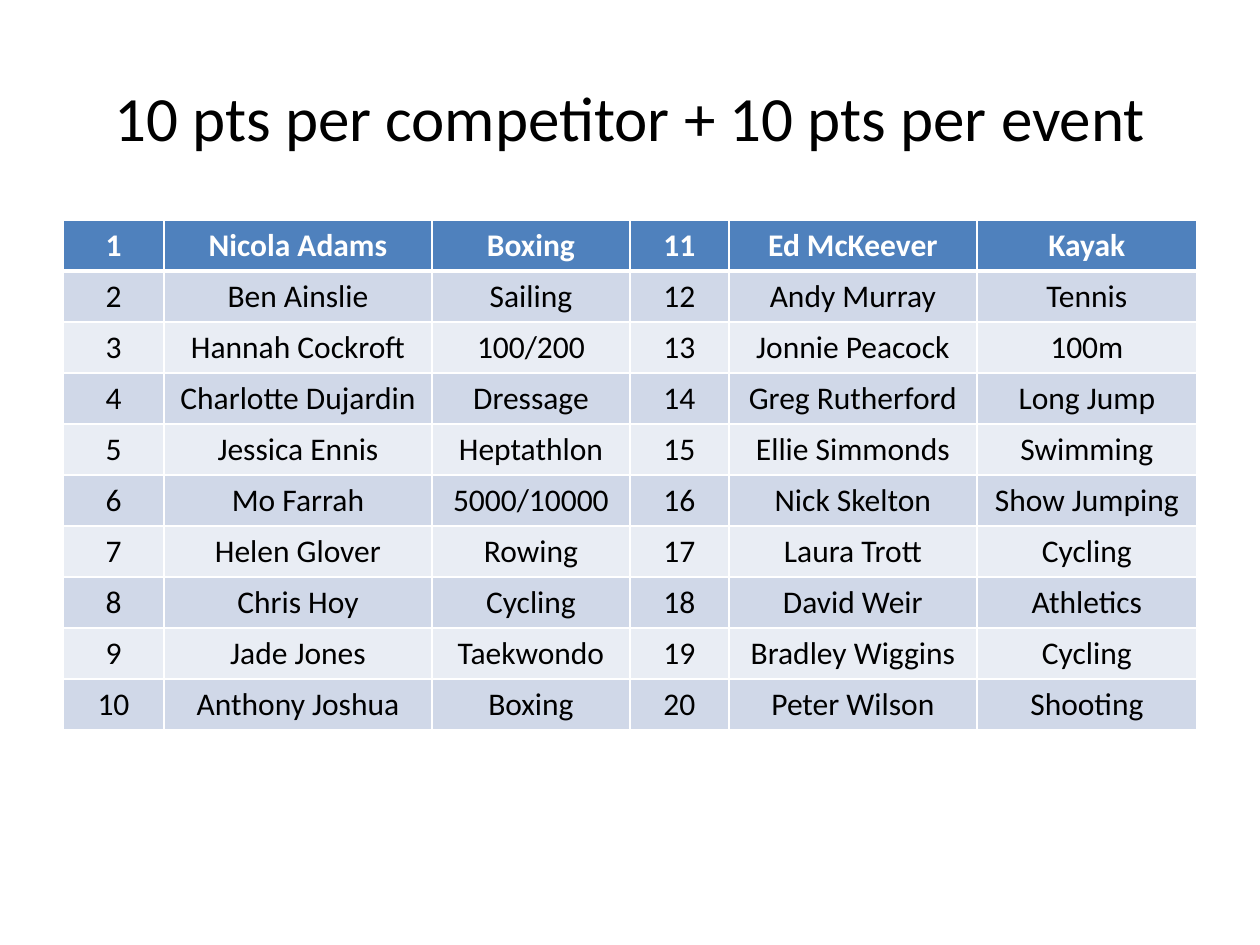
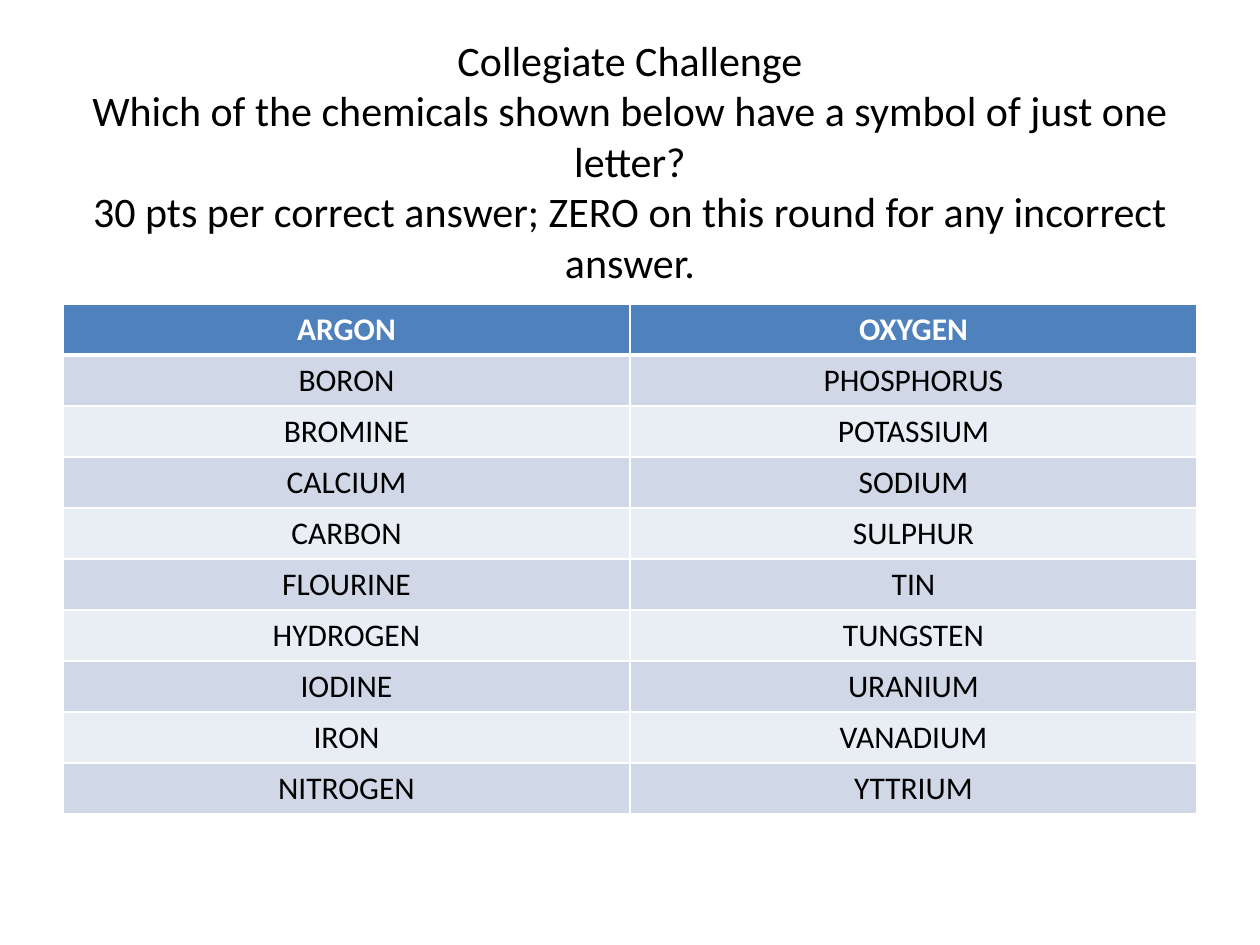
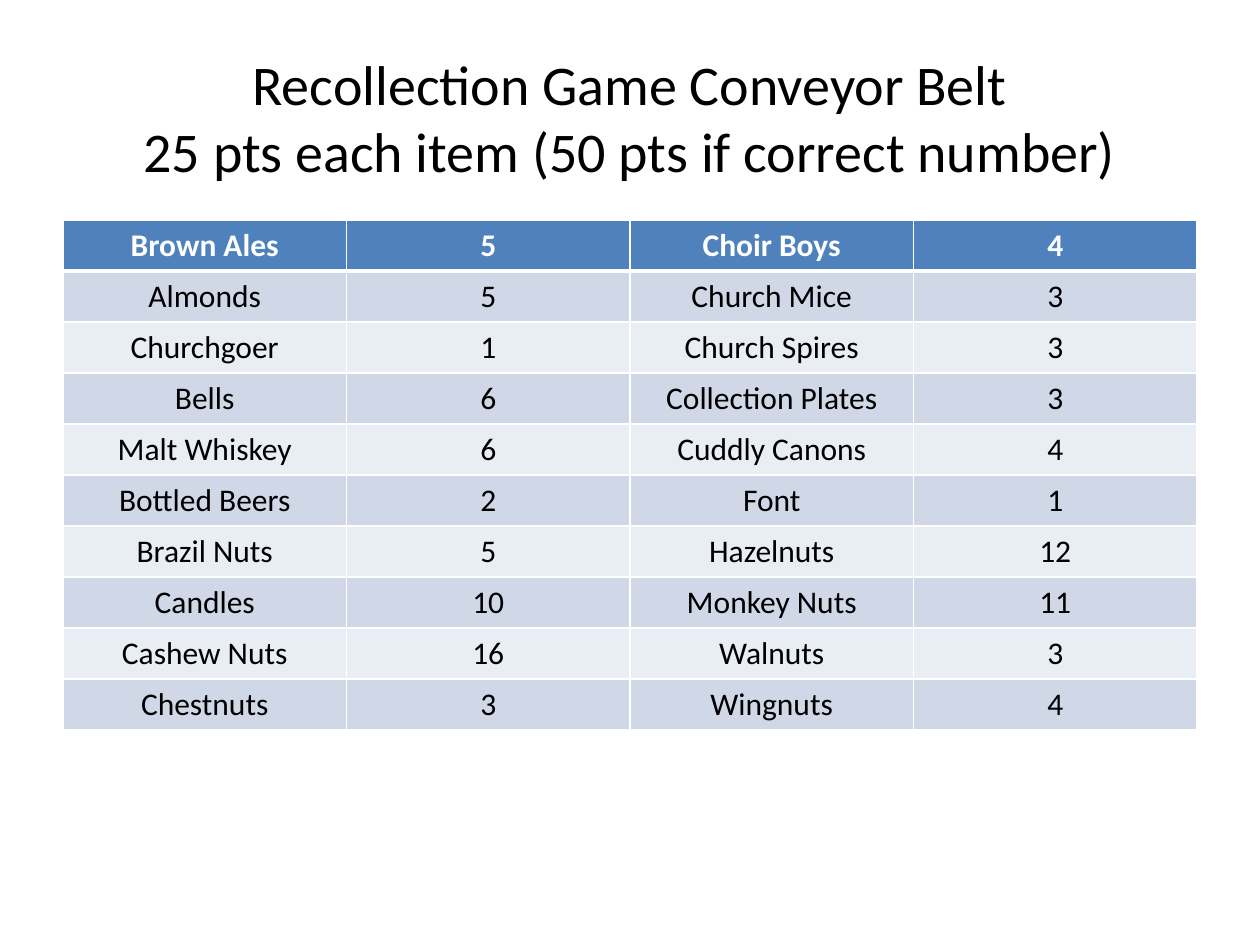
from pptx import Presentation
from pptx.dml.color import RGBColor
from pptx.enum.text import MSO_ANCHOR, PP_ALIGN
from pptx.oxml.ns import qn
from pptx.util import Pt
from lxml.etree import SubElement

PX = 914400 / 126
FONT = "Calibri"
BLACK, WHITE = "000000", "FFFFFF"
HEADER, BANDS = "4F81BD", ("E9EDF4", "D0D8E8")
LEFT, WIDTH, ROW_HEIGHT = 63, 1134, 51
TITLE_TOP = 38

COMPETITORS = [
    ("1", "Nicola Adams", "Boxing", "11", "Ed McKeever", "Kayak"),
    ("2", "Ben Ainslie", "Sailing", "12", "Andy Murray", "Tennis"),
    ("3", "Hannah Cockroft", "100/200", "13", "Jonnie Peacock", "100m"),
    ("4", "Charlotte Dujardin", "Dressage", "14", "Greg Rutherford", "Long Jump"),
    ("5", "Jessica Ennis", "Heptathlon", "15", "Ellie Simmonds", "Swimming"),
    ("6", "Mo Farrah", "5000/10000", "16", "Nick Skelton", "Show Jumping"),
    ("7", "Helen Glover", "Rowing", "17", "Laura Trott", "Cycling"),
    ("8", "Chris Hoy", "Cycling", "18", "David Weir", "Athletics"),
    ("9", "Jade Jones", "Taekwondo", "19", "Bradley Wiggins", "Cycling"),
    ("10", "Anthony Joshua", "Boxing", "20", "Peter Wilson", "Shooting"),
]
CHEMICALS = [
    ("ARGON", "OXYGEN"),
    ("BORON", "PHOSPHORUS"),
    ("BROMINE", "POTASSIUM"),
    ("CALCIUM", "SODIUM"),
    ("CARBON", "SULPHUR"),
    ("FLOURINE", "TIN"),
    ("HYDROGEN", "TUNGSTEN"),
    ("IODINE", "URANIUM"),
    ("IRON", "VANADIUM"),
    ("NITROGEN", "YTTRIUM"),
]
CONVEYOR_ITEMS = [
    ("Brown Ales", "5", "Choir Boys", "4"),
    ("Almonds", "5", "Church Mice", "3"),
    ("Churchgoer", "1", "Church Spires", "3"),
    ("Bells", "6", "Collection Plates", "3"),
    ("Malt Whiskey", "6", "Cuddly Canons", "4"),
    ("Bottled Beers", "2", "Font", "1"),
    ("Brazil Nuts", "5", "Hazelnuts", "12"),
    ("Candles", "10", "Monkey Nuts", "11"),
    ("Cashew Nuts", "16", "Walnuts", "3"),
    ("Chestnuts", "3", "Wingnuts", "4"),
]


def px(n):
    return round(n * PX)


def rgb(color):
    return RGBColor.from_string(color)


def write(tf, text, size, color, bold=False):
    p = tf.paragraphs[0]
    p.text = text
    p.alignment = PP_ALIGN.CENTER
    p.font.name = FONT
    p.font.size = Pt(size)
    p.font.bold = bold
    p.font.color.rgb = rgb(color)


def add_title(slide, text, size, height):
    sp = slide.shapes.add_textbox(px(LEFT), px(TITLE_TOP), px(WIDTH), px(height))
    tf = sp.text_frame
    tf.word_wrap = True
    tf.vertical_anchor = MSO_ANCHOR.MIDDLE
    write(tf, text, size, BLACK)


def add_borders(cell, top, bottom):
    tc_pr = cell._tc.get_or_add_tcPr()
    for i, (side, width) in enumerate((("L", 1), ("R", 1), ("T", top), ("B", bottom))):
        ln = SubElement(tc_pr, qn(f"a:ln{side}"), w=str(Pt(width)))
        fill = SubElement(ln, qn("a:solidFill"))
        SubElement(fill, qn("a:srgbClr"), val=WHITE)
        tc_pr.insert(i, ln)


def add_grid(slide, top, rows, widths):
    shape = slide.shapes.add_table(len(rows), len(widths), px(LEFT), px(top),
                                   px(WIDTH), px(ROW_HEIGHT * len(rows)))
    table = shape.table
    for column, width in zip(table.columns, widths):
        column.width = px(width)
    for r, values in enumerate(rows):
        table.rows[r].height = px(ROW_HEIGHT)
        head = r == 0
        for c, value in enumerate(values):
            cell = table.cell(r, c)
            write(cell.text_frame, value, 18, WHITE if head else BLACK, head)
            cell.fill.solid()
            cell.fill.fore_color.rgb = rgb(HEADER if head else BANDS[r % 2])
            add_borders(cell, 3 if r == 1 else 1, 3 if head else 1)


def add_round(prs, title, size, title_height, top, rows, widths=None):
    slide = prs.slides.add_slide(prs.slide_layouts[6])
    add_title(slide, title, size, title_height)
    columns = len(rows[0])
    add_grid(slide, top, rows, widths or [WIDTH / columns] * columns)


def main():
    prs = Presentation()
    prs.slide_width, prs.slide_height = px(1260), px(945)
    add_round(prs, "10 pts per competitor + 10 pts per event", 36, 157, 220,
              COMPETITORS, (101, 268, 198, 99, 248, 220))
    add_round(prs, "Collegiate Challenge\n"
              "Which of the chemicals shown below have a symbol of just one letter?\n"
              "30 pts per correct answer; ZERO on this round for any incorrect answer.",
              24, 245, 304, CHEMICALS)
    add_round(prs, "Recollection Game Conveyor Belt\n"
              "25 pts each item (50 pts if correct number)",
              32, 157, 220, CONVEYOR_ITEMS)
    prs.save("out.pptx")


if __name__ == "__main__":
    main()
